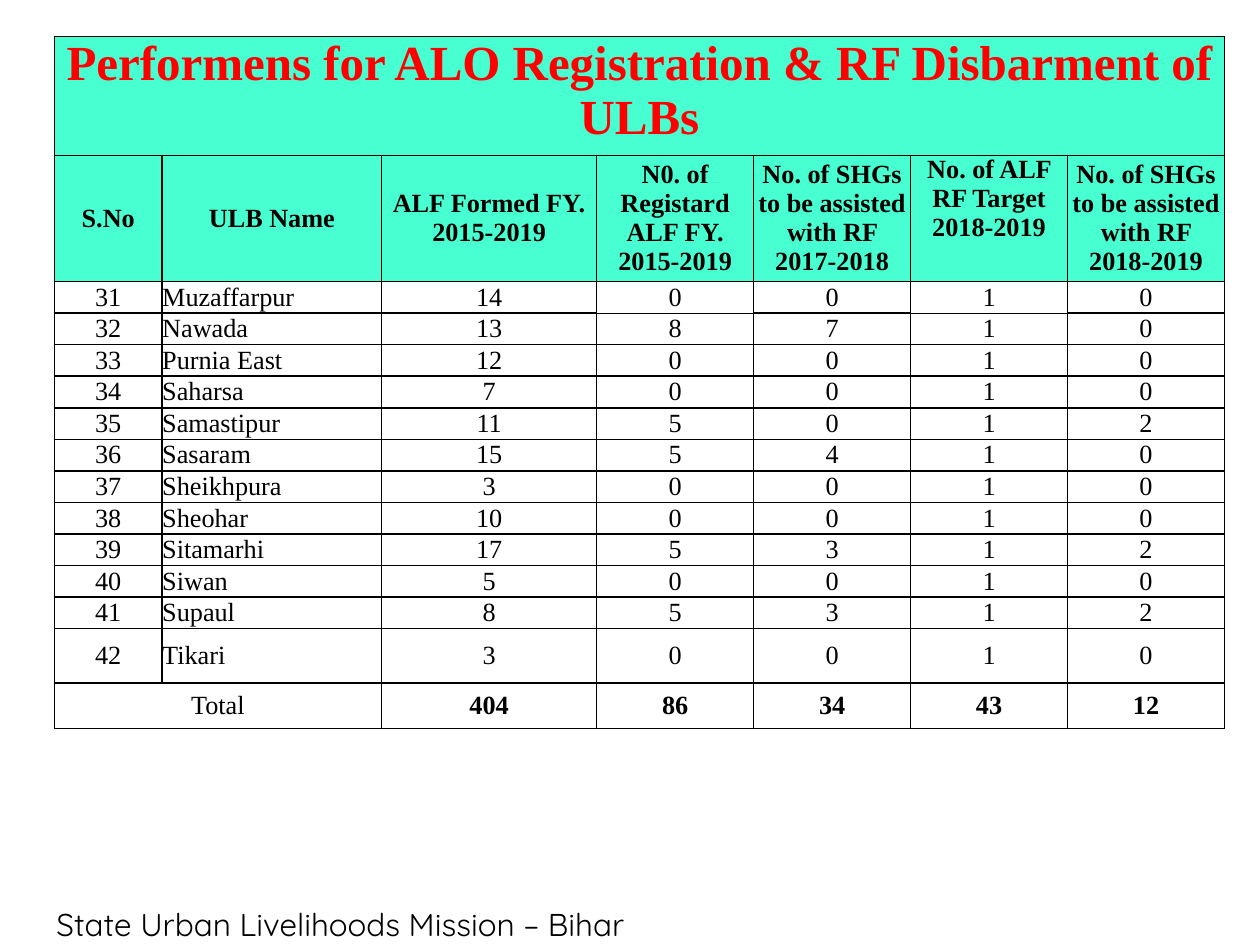
from lxml.etree import SubElement
from pptx import Presentation
from pptx.dml.color import RGBColor
from pptx.enum.text import MSO_ANCHOR as Anchor, PP_ALIGN as Align
from pptx.oxml.ns import qn
from pptx.util import Pt

COLORS = {"ink": "000000", "title": "FF0000", "band": "47FFD1"}
TABLE_FONT = "Times New Roman"
FOOTER_FONT = "Quicksand"

TITLE = "Performens for ALO Registration & RF Disbarment of ULBs"
HEADINGS = [
    "S.No",
    "ULB Name",
    "ALF Formed FY. 2015-2019",
    "N0. of Registard ALF FY. 2015-2019",
    "No. of SHGs to be assisted with RF 2017-2018",
    "No. of ALF RF Target 2018-2019",
    "No. of SHGs to be assisted with RF 2018-2019",
]
FIRST_NUMBER = 31
ULBS = [
    ("Muzaffarpur", 14, 0, 0, 1, 0),
    ("Nawada", 13, 8, 7, 1, 0),
    ("Purnia East", 12, 0, 0, 1, 0),
    ("Saharsa", 7, 0, 0, 1, 0),
    ("Samastipur", 11, 5, 0, 1, 2),
    ("Sasaram", 15, 5, 4, 1, 0),
    ("Sheikhpura", 3, 0, 0, 1, 0),
    ("Sheohar", 10, 0, 0, 1, 0),
    ("Sitamarhi", 17, 5, 3, 1, 2),
    ("Siwan", 5, 0, 0, 1, 0),
    ("Supaul", 8, 5, 3, 1, 2),
    ("Tikari", 3, 0, 0, 1, 0),
]
TOTALS = ["Total", "", 404, 86, 34, 43, 12]

COLUMN_SHARES = [61.7, 125.4, 122.9] + [89.7] * 4
ROW_SHARES = [68, 72] + [18] * 11 + [31, 26]
THIN_EDGES = {
    (2, 3): "RB", (2, 4): "L", (3, 3): "T",
    (2, 5): "RB", (2, 6): "L", (3, 5): "T",
}


def add_run(paragraph, text, font_name, size, color, bold=False):
    run = paragraph.add_run()
    run.text = text
    run.font.name = font_name
    run.font.size = Pt(size)
    run.font.bold = bold
    run.font.color.rgb = RGBColor.from_string(COLORS[color])


def set_borders(cell, thin_sides):
    properties = cell._tc.get_or_add_tcPr()
    for side in "LRTB":
        width = Pt(0.5 if side in thin_sides else 1)
        line = SubElement(properties, qn(f"a:ln{side}"), w=str(width))
        fill = SubElement(line, qn("a:solidFill"))
        SubElement(fill, qn("a:srgbClr"), val=COLORS["ink"])


def style_cell(cell, row, column):
    set_borders(cell, THIN_EDGES.get((row, column), ""))
    cell.margin_left = cell.margin_right = Pt(0)
    cell.margin_top = cell.margin_bottom = Pt(0)
    top_aligned = row == 0 or (row, column) == (1, 5)
    cell.vertical_anchor = Anchor.TOP if top_aligned else Anchor.MIDDLE
    if row < 2:
        cell.fill.solid()
        cell.fill.fore_color.rgb = RGBColor.from_string(COLORS["band"])
    else:
        cell.fill.background()


def add_performance_table(slide, left, top, width, height):
    rows = [[TITLE] + [""] * 6, HEADINGS]
    rows += [(number, *ulb) for number, ulb in enumerate(ULBS, FIRST_NUMBER)]
    rows.append(TOTALS)
    last = len(rows) - 1
    table = slide.shapes.add_table(
        len(rows), len(HEADINGS), Pt(left), Pt(top), Pt(width), Pt(height)
    ).table
    for column, share in zip(table.columns, COLUMN_SHARES):
        column.width = Pt(width * share / sum(COLUMN_SHARES))
    for row, share in zip(table.rows, ROW_SHARES):
        row.height = Pt(height * share / sum(ROW_SHARES))
    table.cell(0, 0).merge(table.cell(0, 6))
    table.cell(last, 0).merge(table.cell(last, 1))

    for r, values in enumerate(rows):
        for c, value in enumerate(values):
            cell = table.cell(r, c)
            style_cell(cell, r, c)
            if value == "":
                continue
            paragraph = cell.text_frame.paragraphs[0]
            is_name = c == 1 and 1 < r < last
            paragraph.alignment = Align.LEFT if is_name else Align.CENTER
            size, color = (28, "title") if r == 0 else (15, "ink")
            bold = r < 2 or (r == last and c > 1)
            add_run(paragraph, str(value), TABLE_FONT, size, color, bold)


def add_footer(slide, left, top, width, height):
    frame = slide.shapes.add_textbox(
        Pt(left), Pt(top), Pt(width), Pt(height)
    ).text_frame
    frame.word_wrap = True
    frame.margin_left = Pt(12)
    add_run(frame.paragraphs[0], "State Urban Livelihoods Mission – Bihar",
            FOOTER_FONT, 18, "ink")


def main():
    deck = Presentation()
    deck.slide_width, deck.slide_height = Pt(720), Pt(540)
    slide = deck.slides.add_slide(deck.slide_layouts[6])
    add_footer(slide, 20.2, 513.4, 464.4, 28.8)
    add_performance_table(slide, 31, 20.9, 668.8, 395)
    deck.save("out.pptx")


if __name__ == "__main__":
    main()
